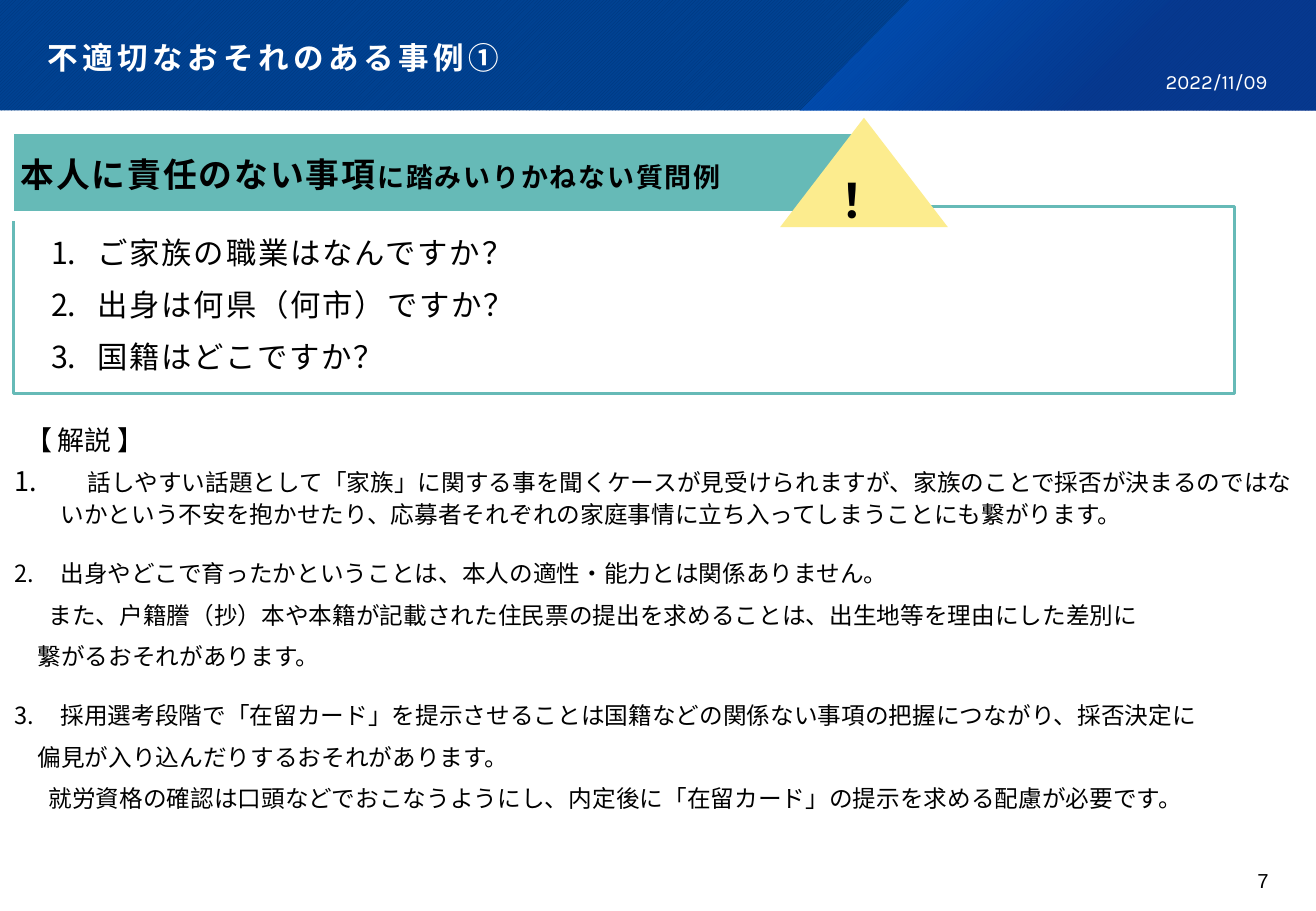
from dataclasses import dataclass, field

from lxml import etree
from pptx import Presentation
from pptx import util as u
from pptx.dml.color import RGBColor
from pptx.enum import dml, shapes, text
from pptx.oxml import ns

WIDTH, HEIGHT = 10.83, 7.5
CJK = "Noto Sans CJK JP"


@dataclass
class Theme:
    ink: str = "000000"
    paper: str = "FFFFFF"
    teal: str = "66BAB7"
    warning: str = "FCEC8E"
    stripe: str = "003579"
    banner: str = "004292"
    # position, colour, opacity (percent)
    glow: tuple = ((0, "0064DF", 50), (62, "0C338E", 55))
    # font, size, bold, colour, letter spacing (points)
    styles: dict = field(default_factory=lambda: {
        "title": ("Karla", 18.1, True, "FFFFFF", 2.7),
        "date": ("Karla", 12, False, "FFFFFF", 0),
        "page": ("Arial", 12, False, "000000", 0),
        "mark": ("Karla", 28, True, "000000", 0),
        "heading": (CJK, 20, True, "000000", 1.1),
        "subheading": (CJK, 16, True, "000000", 1.1),
        "question": (CJK, 18, False, "000000", 1.1),
        "label": (CJK, 16, False, "000000", 0),
        "note": (CJK, 14, False, "000000", 0),
    })


THEME = Theme()
QUESTIONS = ("ご家族の職業はなんですか？", "出身は何県（何市）ですか？", "国籍はどこですか？")
# number or None, first-line indent (inches), space after (points), spans
NOTES = (
    (1, 0, 16.7, [("　", "label"), (
        "話しやすい話題として「家族」に関する事を聞くケースが見受けられますが、"
        "家族のことで採否が決まるのではないかという不安を抱かせたり、"
        "応募者それぞれの家庭事情に立ち入ってしまうことにも繋がります。", "note")]),
    (2, 0, 6, [("出身やどこで育ったかということは、本人の適性・能力とは関係ありません。", "note")]),
    (None, 0.28, 6, [("また、戸籍謄（抄）本や本籍が記載された住民票の提出を求めることは、"
                      "出生地等を理由にした差別に", "note")]),
    (None, 0.19, 16.7, [("繋がるおそれがあります。", "note")]),
    (3, 0, 6, [("採用選考段階で「在留カード」を提示させることは国籍などの関係ない事項の"
                "把握につながり、採否決定に", "note")]),
    (None, 0.19, 6, [("偏見が入り込んだりするおそれがあります。", "note")]),
    (None, 0.28, 6, [("就労資格の確認は口頭などでおこなうようにし、"
                      "内定後に「在留カード」の提示を求める配慮が必要です。", "note")]),
)


def rgb(value):
    return RGBColor.from_string(value)


def share(left, top, width, height):
    """Turn percentages of the slide into lengths."""
    return [u.Inches(WIDTH * left / 100), u.Inches(HEIGHT * top / 100),
            u.Inches(WIDTH * width / 100), u.Inches(HEIGHT * height / 100)]


def set_all(target, **values):
    for name, value in values.items():
        setattr(target, name, value)


def child(parent, tag, **attributes):
    return etree.SubElement(parent, ns.qn(tag), {k: str(v) for k, v in attributes.items()})


def add_span(para, words, style):
    name, size, bold, color, tracking = THEME.styles[style]
    span = para.add_run()
    span.text = words
    set_all(span.font, name=name, size=u.Pt(size), bold=bold)
    span.font.color.rgb = rgb(color)
    properties = span.font._element
    properties.set("spc", str(round(tracking * 100)))
    child(properties, "a:ea", typeface=name)


def number(para, start):
    """Give a paragraph an automatic number with a hanging indent."""
    properties = para._p.get_or_add_pPr()
    hang = u.Inches(0.38)
    properties.set("marL", str(hang))
    properties.set("indent", str(-hang))
    child(child(properties, "a:buClr"), "a:srgbClr", val=THEME.ink)
    child(properties, "a:buAutoNum", type="arabicPeriod", startAt=start)


def write(shape, paragraphs, anchor="TOP", align="LEFT", spacing=1.1,
          margins=(0.1, 0.05, 0.1, 0.05)):
    """Fill a shape with (number, indent, space after, spans) paragraphs."""
    frame = shape.text_frame
    sides = ("margin_left", "margin_top", "margin_right", "margin_bottom")
    set_all(frame, word_wrap=True, vertical_anchor=getattr(text.MSO_ANCHOR, anchor),
            **{side: u.Inches(gap) for side, gap in zip(sides, margins)})
    for index, (start, indent, after, spans) in enumerate(paragraphs):
        para = frame.add_paragraph() if index else frame.paragraphs[0]
        set_all(para, alignment=getattr(text.PP_ALIGN, align), line_spacing=spacing,
                space_after=u.Pt(after))
        if start:
            number(para, 1 if paragraphs is not NOTES else start)
            para._p.pPr.find(ns.qn("a:buAutoNum")).set("startAt", str(start))
        elif indent:
            para._p.get_or_add_pPr().set("indent", str(u.Inches(indent)))
        for words, style in spans:
            add_span(para, words, style)


def add_box(page, area, paragraphs, **layout):
    write(page.shapes.add_textbox(*share(*area)), paragraphs, **layout)


def add_panel(page, kind, area, fill=None, line=None, weight=0):
    panel = page.shapes.add_shape(kind, *share(*area))
    panel.shadow.inherit = False
    if fill:
        panel.fill.solid()
        panel.fill.fore_color.rgb = rgb(fill)
    else:
        panel.fill.background()
    if line:
        panel.line.color.rgb = rgb(line)
        panel.line.width = u.Pt(weight)
    else:
        panel.line.fill.background()
    return panel


def add_banner(page):
    banner = add_panel(page, shapes.MSO_SHAPE.RECTANGLE, (0, 0, 100, 12.13))
    banner.fill.patterned()
    banner.fill.pattern = dml.MSO_PATTERN.DARK_UPWARD_DIAGONAL
    banner.fill.fore_color.rgb = rgb(THEME.stripe)
    banner.fill.back_color.rgb = rgb(THEME.banner)

    corners = [share(x, y, 0, 0)[:2]
               for x, y in ((69.16, 0), (100, 0), (100, 12.13), (60.76, 12.13))]
    builder = page.shapes.build_freeform(*corners[0])
    builder.add_line_segments(corners[1:], close=True)
    glow = builder.convert_to_shape()
    glow.shadow.inherit = False
    glow.line.fill.background()
    gradient = etree.Element(ns.qn("a:gradFill"), {"rotWithShape": "1"})
    stops = child(gradient, "a:gsLst")
    for position, color, opacity in THEME.glow:
        stop = child(stops, "a:gs", pos=position * 1000)
        child(child(stop, "a:srgbClr", val=color), "a:alpha", val=opacity * 1000)
    focus = child(gradient, "a:path", path="circle")
    child(focus, "a:fillToRect", r=100000, b=100000)
    glow._element.spPr.find(ns.qn("a:custGeom")).addnext(gradient)


def plain(words, style, after=0):
    return [(None, 0, after, [(words, style)])]


def main():
    deck = Presentation()
    set_all(deck, slide_width=u.Inches(WIDTH), slide_height=u.Inches(HEIGHT))
    page = deck.slides.add_slide(deck.slide_layouts[6])
    kinds = shapes.MSO_SHAPE

    add_banner(page)
    add_box(page, (0, 0, 100, 8.67), plain("不適切なおそれのある事例①", "title"),
            anchor="BOTTOM", spacing=0.9, margins=(0.39, 0.36, 0.36, 0.14))

    questions = add_panel(page, kinds.RECTANGLE, (1.02, 22.67, 92.8, 20.53),
                          line=THEME.teal, weight=2)
    write(questions, [(place, 0, 7, [(words, "question")])
                      for place, words in enumerate(QUESTIONS, 1)],
          margins=(0.31, 0.2, 0.16, 0.2))
    heading = add_panel(page, kinds.RECTANGLE, (0.65, 14.13, 66.3, 9.6),
                        THEME.teal, THEME.paper, 6)
    write(heading, [(None, 0, 8, [("本人に責任のない事項", "heading"),
                                  ("に踏みいりかねない質問例", "subheading")])],
          anchor="MIDDLE")

    add_box(page, (1.02, 45.47, 93.35, 5.33),
            [(None, 0, 6, [("【", "label"), (" ", "note"), ("解説 】", "label")])])
    add_box(page, (0.18, 50, 99.82, 40.4), NOTES)

    warning = add_panel(page, kinds.ISOSCELES_TRIANGLE, (59.28, 12.93, 12.74, 12),
                        THEME.warning)
    write(warning, plain("！", "mark"), anchor="MIDDLE", align="CENTER", spacing=1.0)

    edge = {"align": "RIGHT", "spacing": 1.0, "margins": (0, 0, 0, 0)}
    add_box(page, (73.78, 6.27, 22.53, 5.33), plain("2022/11/09", "date"),
            anchor="MIDDLE", **edge)
    add_box(page, (90.03, 95.33, 6.37, 4), plain("7", "page"), **edge)
    deck.save("out.pptx")


if __name__ == "__main__":
    main()
